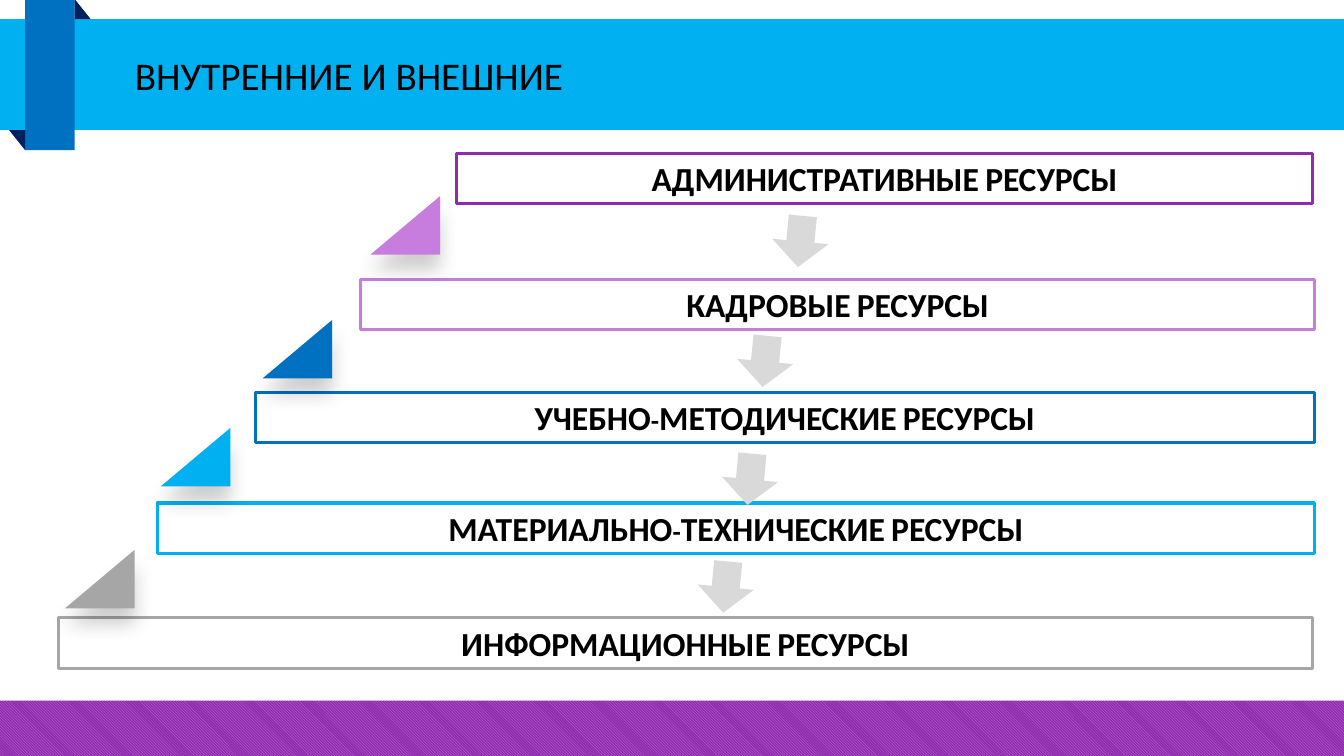
from dataclasses import dataclass

from lxml.etree import SubElement
from pptx import Presentation
from pptx.dml.color import RGBColor
from pptx.enum.dml import MSO_PATTERN
from pptx.enum.shapes import MSO_SHAPE as Shape
from pptx.enum.text import MSO_ANCHOR as Anchor, PP_ALIGN as Align
from pptx.oxml.ns import qn
from pptx.util import Pt

COLORS = {
    "black": "000000",
    "white": "FFFFFF",
    "gray": "A6A6A6",
    "light_gray": "D9D9D9",
    "sky": "00B0F0",
    "blue": "0070C0",
    "navy": "002060",
    "lilac": "C67DDD",
    "purple": "8F2CAE",
}
FONT = "Calibri"
SLIDE_W, SLIDE_H = 960, 540
BAR_H = 36
STEP_W, STEP_H = 41.76, 49.68
ARROW_W, ARROW_H = 40.32, 36.72


@dataclass(frozen=True)
class Resource:
    label: str
    color: str
    left: float
    top: float
    right: float


@dataclass(frozen=True)
class Block:
    kind: Shape
    left: float
    top: float
    width: float
    height: float
    color: str
    rotation: float = 0
    apex: float | None = None


@dataclass(frozen=True)
class Spot:
    left: float
    top: float
    color: str = "light_gray"


RESOURCES = [
    Resource("ИНФОРМАЦИОННЫЕ РЕСУРСЫ", "gray", 41.76, 441.3, 937.4),
    Resource("МАТЕРИАЛЬНО-ТЕХНИЧЕСКИЕ РЕСУРСЫ", "sky", 112.3, 359.3, 938.9),
    Resource("УЧЕБНО-МЕТОДИЧЕСКИЕ РЕСУРСЫ", "blue", 182.2, 280.1, 938.9),
    Resource("КАДРОВЫЕ РЕСУРСЫ", "lilac", 257.8, 199.4, 938.9),
    Resource("АДМИНИСТРАТИВНЫЕ РЕСУРСЫ", "purple", 326.2, 109.4, 937.4),
]
STEPS = [
    Spot(50.4, 388.8, "gray"),
    Spot(118.8, 301.7, "sky"),
    Spot(191.5, 224.6, "blue"),
    Spot(268.6, 136.1, "lilac"),
]
ARROWS = [Spot(551.5, 154.1), Spot(526.3, 239.8), Spot(515.5, 324), Spot(498.2, 401)]
RIBBON = [
    Block(Shape.RECTANGLE, 0, 13.7, SLIDE_W, 79.2, "sky"),
    Block(Shape.RECTANGLE, 18, 0, 35.3, 107.3, "blue"),
    Block(Shape.ISOSCELES_TRIANGLE, 5, 94.3, 14.4, 11.5, "navy", 270, 1),
    Block(Shape.ISOSCELES_TRIANGLE, 51.8, 0.7, 14.4, 11.5, "navy", 90, 1),
]


def rgb(name: str) -> RGBColor:
    return RGBColor.from_string(COLORS[name])


def draw_block(slide, block: Block):
    shape = slide.shapes.add_shape(
        block.kind, Pt(block.left), Pt(block.top), Pt(block.width), Pt(block.height)
    )
    shape.shadow.inherit = False
    shape.fill.solid()
    shape.fill.fore_color.rgb = rgb(block.color)
    shape.line.fill.background()
    shape.rotation = block.rotation
    if block.apex is not None:
        shape.adjustments[0] = block.apex
    return shape


def write(frame, text: str, size: float, bold: bool):
    frame.word_wrap = True
    frame.vertical_anchor = Anchor.MIDDLE
    frame.text = text
    paragraph = frame.paragraphs[0]
    font = paragraph.runs[0].font
    font.name = FONT
    font.size = Pt(size)
    font.bold = bold
    font.color.rgb = rgb("black")
    return paragraph


def draw_resource(slide, resource: Resource) -> None:
    width = resource.right - resource.left
    bar = draw_block(
        slide,
        Block(Shape.RECTANGLE, resource.left, resource.top, width, BAR_H, "white"),
    )
    bar.line.color.rgb = rgb(resource.color)
    bar.line.width = Pt(2.25)
    label = write(bar.text_frame, resource.label, 24, True)
    label.alignment = Align.CENTER
    label.runs[0].font._element.set("cap", "small")


def draw_step(slide, spot: Spot) -> None:
    step = draw_block(
        slide,
        Block(Shape.RIGHT_TRIANGLE, spot.left, spot.top, STEP_W, STEP_H, spot.color, 270),
    )
    effects = step._element.spPr.find(qn("a:effectLst"))
    shadow = SubElement(
        effects,
        qn("a:outerShdw"),
        blurRad=str(Pt(14)),
        dist=str(Pt(11)),
        dir="5400000",
        rotWithShape="0",
    )
    tint = SubElement(shadow, qn("a:srgbClr"), val=COLORS["black"])
    SubElement(tint, qn("a:alpha"), val="20000")


def draw_arrow(slide, spot: Spot) -> None:
    draw_block(
        slide,
        Block(Shape.UP_ARROW, spot.left, spot.top, ARROW_W, ARROW_H, spot.color, 185.5),
    )


def draw_heading(slide) -> None:
    heading = slide.shapes.add_textbox(Pt(53.3), Pt(15.1), Pt(853.9), Pt(77))
    line = write(heading.text_frame, "ВНУТРЕННИЕ И ВНЕШНИЕ", 28, False)
    line._p.get_or_add_pPr().set("marL", str(Pt(36)))


def draw_footer(slide) -> None:
    footer = draw_block(
        slide, Block(Shape.RECTANGLE, 0, 500.4, SLIDE_W, SLIDE_H - 500.4, "purple")
    )
    footer.fill.patterned()
    footer.fill.pattern = MSO_PATTERN.LIGHT_DOWNWARD_DIAGONAL
    footer.fill.fore_color.rgb = rgb("lilac")
    footer.fill.back_color.rgb = rgb("purple")


def main() -> None:
    deck = Presentation()
    deck.slide_width, deck.slide_height = Pt(SLIDE_W), Pt(SLIDE_H)
    slide = deck.slides.add_slide(deck.slide_layouts[6])
    for resource in RESOURCES:
        draw_resource(slide, resource)
    for step in STEPS:
        draw_step(slide, step)
    for block in RIBBON:
        draw_block(slide, block)
    draw_heading(slide)
    draw_footer(slide)
    for arrow in ARROWS:
        draw_arrow(slide, arrow)
    deck.save("out.pptx")


if __name__ == "__main__":
    main()
